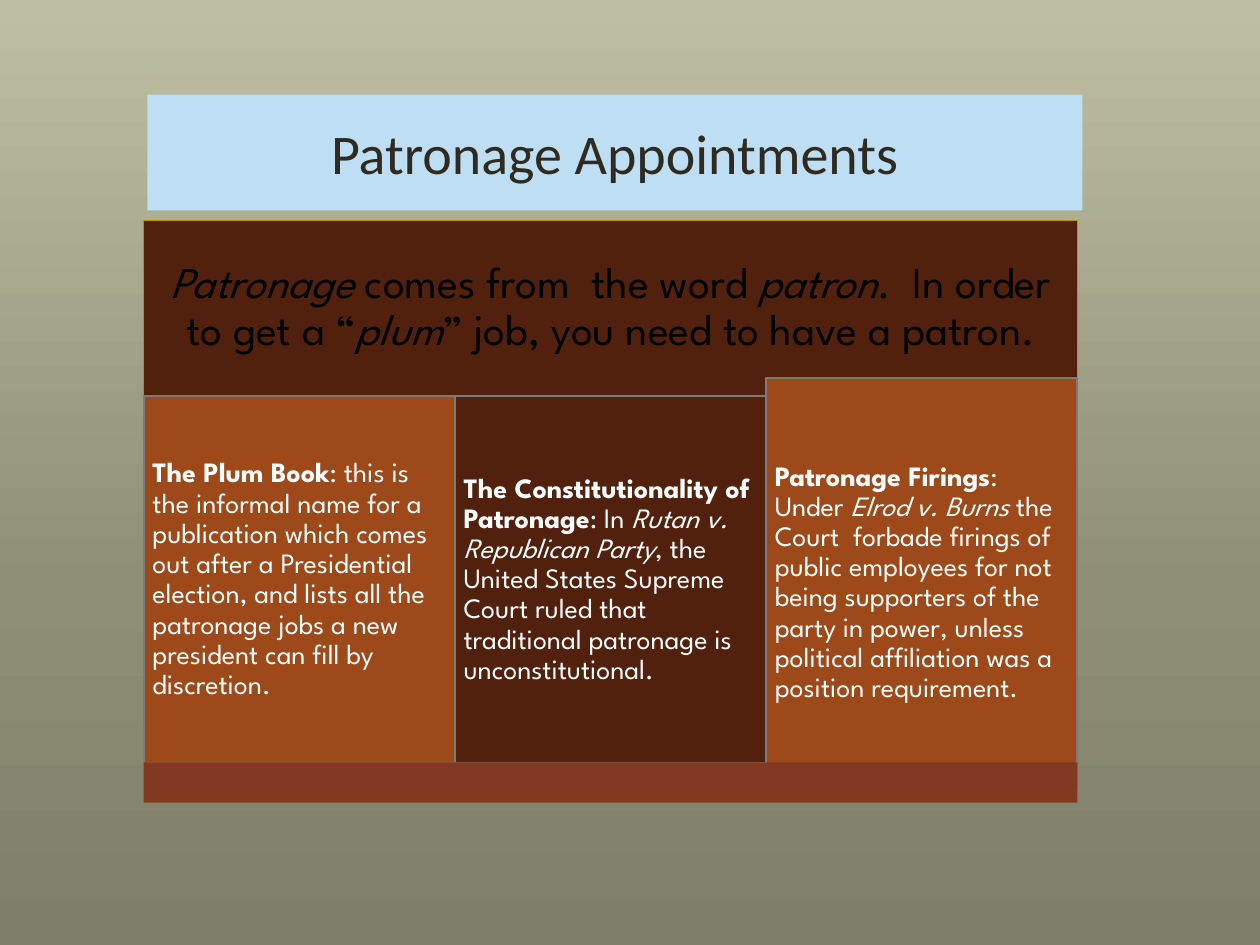
import copy

import pptx
import pptx.dml.color
import pptx.enum.shapes
import pptx.enum.text
import pptx.util
from pptx.util import Inches

COLORS = {
    "title_fill": "BEDEF3", "title_text": "2F2B20",
    "dark": "52210E", "rust": "9E491A", "footer": "823922",
    "gold": "B89101", "gray": "7A7A7A", "black": "000000", "white": "FFFFFF",
}
BACKGROUND = [(0, "BEBEA2"), (0.62, "8F8F76"), (1, "7E7E69")]

# Runs are (text, style), where style is "", "b" or "i"
BANNER = [
    ("Patronage", "i"), (" comes from  the word ", ""), ("patron", "i"),
    (".  In order to get a “", ""), ("plum", "i"),
    ("” job, you need to have a patron.", ""),
]
# Columns are (fill, top, height, runs)
COLUMNS = [
    ("rust", 3.14, 2.92, [
        ("The Plum Book", "b"),
        (": this is the informal name for a publication which comes out after a "
         "Presidential election, and lists all the patronage jobs a new president "
         "can fill by discretion.", "")]),
    ("dark", 3.14, 2.92, [
        ("The Constitutionality of Patronage", "b"), (": In ", ""),
        ("Rutan v. Republican Party", "i"),
        (", the United States Supreme Court ruled that traditional patronage is "
         "unconstitutional.", "")]),
    ("rust", 3, 3.25, [
        ("Patronage Firings", "b"), (":  Under ", ""), ("Elrod v. Burns ", "i"),
        ("the Court  forbade firings of public employees for not being supporters "
         "of the party in power, unless political affiliation was a position "
         "requirement.", "")]),
]


def rgb(name):
    return pptx.dml.color.RGBColor.from_string(COLORS.get(name, name))


def set_background(s):
    fill = s.background.fill
    fill.gradient()
    fill.gradient_angle = 270
    stops = s.element.xpath(".//a:gsLst")[0]
    stops.append(copy.deepcopy(stops[-1]))
    for stop, (position, color) in zip(fill.gradient_stops, BACKGROUND):
        stop.position = position
        stop.color.rgb = rgb(color)


def set_title(s, left, top, width, height):
    sp = s.shapes.title
    sp.left, sp.top, sp.width, sp.height = left, top, width, height
    sp.fill.solid()
    sp.fill.fore_color.rgb = rgb("title_fill")
    tf = sp.text_frame
    tf.text = "Patronage Appointments"
    tf.vertical_anchor = pptx.enum.text.MSO_ANCHOR.MIDDLE
    p = tf.paragraphs[0]
    p.alignment = pptx.enum.text.PP_ALIGN.CENTER
    p.font.name, p.font.size = "Calibri", pptx.util.Pt(32)
    p.font.color.rgb = rgb("title_text")


def add_panel(s, left, top, width, height, fill, line=None, line_width=1.25):
    sp = s.shapes.add_shape(pptx.enum.shapes.MSO_SHAPE.RECTANGLE,
                            left, top, width, height)
    sp.shadow.inherit = False
    sp.fill.solid()
    sp.fill.fore_color.rgb = rgb(fill)
    if line:
        sp.line.color.rgb = rgb(line)
        sp.line.width = pptx.util.Pt(line_width)
    else:
        sp.line.fill.background()
    return sp


def write_runs(sp, runs, size, color, align, inset):
    tf = sp.text_frame
    tf.word_wrap = True
    tf.vertical_anchor = pptx.enum.text.MSO_ANCHOR.MIDDLE
    tf.margin_left = tf.margin_right = tf.margin_top = tf.margin_bottom = inset
    p = tf.paragraphs[0]
    p.alignment = align
    p.line_spacing = 0.9
    p.font.name, p.font.size = "League Spartan", pptx.util.Pt(size)
    p.font.color.rgb = rgb(color)
    for text, style in runs:
        r = p.add_run()
        r.text = text
        if style:
            r.font.bold = style == "b"
            r.font.italic = style == "i"


def add_banner(s, left, top, width, height):
    sp = add_panel(s, left, top, width, height, "dark", "gold", 0.75)
    write_runs(sp, BANNER, 25, "black", pptx.enum.text.PP_ALIGN.CENTER, Inches(0.1))


def add_columns(s, left, width):
    column_width = width // len(COLUMNS)
    for i, (fill, top, height, runs) in enumerate(COLUMNS):
        sp = add_panel(s, left + i * column_width, Inches(top), column_width,
                       Inches(height), fill, "gray")
        write_runs(sp, runs, 16, "white", pptx.enum.text.PP_ALIGN.LEFT, Inches(0.07))


def main():
    prs = pptx.Presentation()
    prs.slide_width, prs.slide_height = Inches(10), Inches(7.5)
    s = prs.slides.add_slide(prs.slide_layouts[5])
    set_background(s)
    set_title(s, Inches(1.17), Inches(0.75), Inches(7.42), Inches(0.92))

    # Banner, three columns and the footer bar share one width
    left, width = Inches(1.14), Inches(7.41)
    add_banner(s, left, Inches(1.75), width, Inches(1.39))
    add_columns(s, left, width)
    add_panel(s, left, Inches(6.05), width, Inches(0.32), "footer")
    prs.save("out.pptx")


if __name__ == "__main__":
    main()
